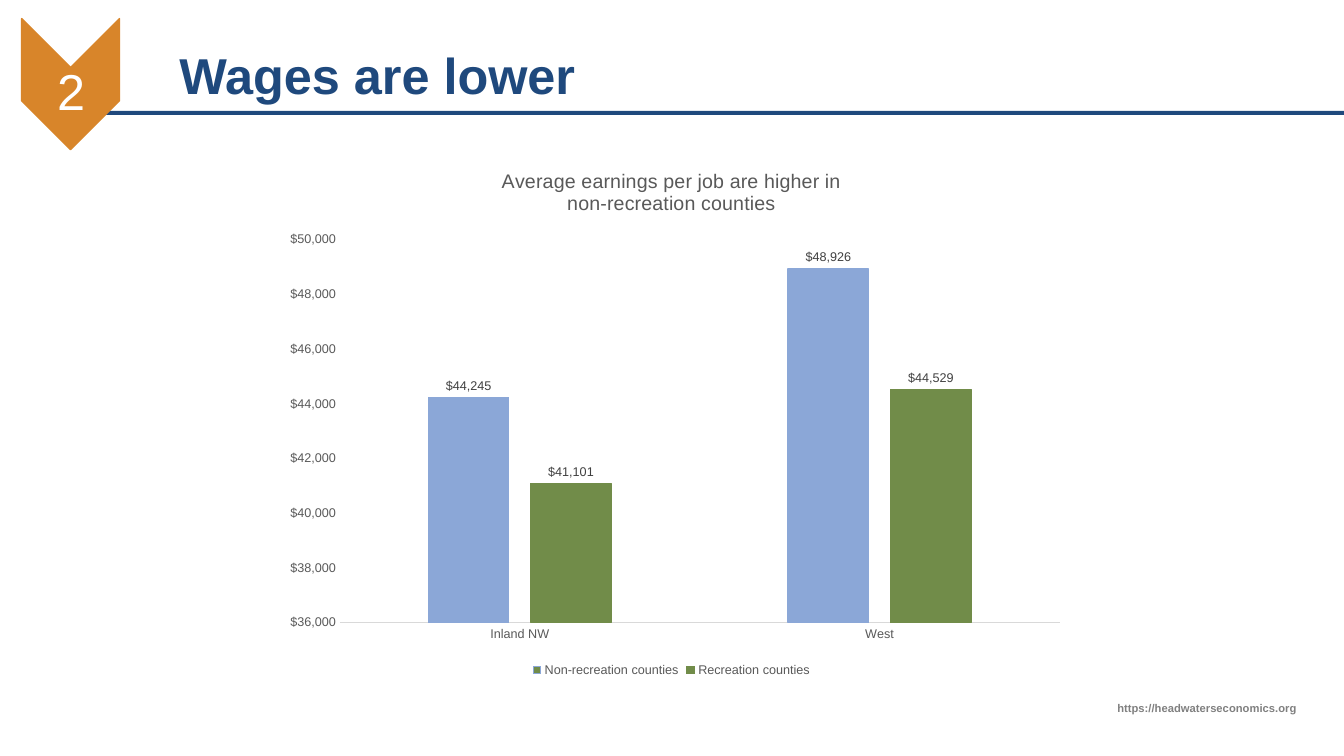
from pptx import Presentation
from pptx.chart.data import CategoryChartData
from pptx.dml.color import RGBColor
from pptx.enum.chart import XL_CHART_TYPE, XL_LABEL_POSITION, XL_LEGEND_POSITION, XL_TICK_MARK
from pptx.enum.shapes import MSO_SHAPE
from pptx.enum.text import MSO_ANCHOR, MSO_AUTO_SIZE, PP_ALIGN
from pptx.oxml import parse_xml
from pptx.oxml.ns import nsdecls
from pptx.util import Pt

COLUMNS = XL_CHART_TYPE.COLUMN_CLUSTERED
OUTSIDE = XL_LABEL_POSITION.OUTSIDE_END
BOTTOM_LEGEND = XL_LEGEND_POSITION.BOTTOM
NO_TICKS = XL_TICK_MARK.NONE
RECTANGLE, CHEVRON = MSO_SHAPE.RECTANGLE, MSO_SHAPE.CHEVRON
MIDDLE, BOTTOM = MSO_ANCHOR.MIDDLE, MSO_ANCHOR.BOTTOM
LEFT, CENTER, RIGHT = PP_ALIGN.LEFT, PP_ALIGN.CENTER, PP_ALIGN.RIGHT
NO_FIT, GROW = MSO_AUTO_SIZE.NONE, MSO_AUTO_SIZE.SHAPE_TO_FIT_TEXT

PX = 9144  # 100 px to the inch
THEME = {
    "font": "Arial",
    "navy": "1F497D", "orange": "D8852A", "white": "FFFFFF",
    "blue": "8BA7D7", "green": "718C49",
    "source": "808080", "axis": "595959", "label": "404040", "baseline": "D9D9D9",
    "heading": 36, "chart_title": 14, "small": 9, "credit": 8,
}
DOLLARS = '"$"#,##0'


def color(name):
    return RGBColor.from_string(THEME[name])


def style(font, size, color_name, bold=False):
    values = {"name": THEME["font"], "size": Pt(THEME[size]), "bold": bold}
    for key, value in values.items():
        setattr(font, key, value)
    font.color.rgb = color(color_name)


deck = Presentation()
deck.slide_width, deck.slide_height = 1333 * PX, 750 * PX
page = deck.slides.add_slide(deck.slide_layouts[5])

# Title and its rule
title = page.shapes.title
title.left, title.top, title.width, title.height = [n * PX for n in (168, 40, 1074, 70)]
rule = page.shapes.add_shape(RECTANGLE, *[n * PX for n in (100, 110, 1233, 4)])

# Numbered chevron
badge = page.shapes.add_group_shape()
chevron = badge.shapes.add_shape(CHEVRON, *[n * PX for n in (5, 35, 130, 97)])
chevron.rotation = 90
chevron.line.color.rgb = color("orange")
chevron.line.width = Pt(1)
number = badge.shapes.add_textbox(*[n * PX for n in (22, 74, 97, 39)])
for side in ("left", "top", "right", "bottom"):
    setattr(number.text_frame, f"margin_{side}", 3 * PX)

for shape, fill in ((rule, "navy"), (chevron, "orange")):
    shape.shadow.inherit = False
    shape.fill.solid()
    shape.fill.fore_color.rgb = color(fill)
rule.line.fill.background()

# Earnings chart
earnings = CategoryChartData(number_format=DOLLARS)
earnings.categories = ["Inland NW", "West"]
earnings.add_series("Non-recreation counties", (44245, 48926))
earnings.add_series("Recreation counties", (41101, 44529))
chart = page.shapes.add_chart(COLUMNS, *[n * PX for n in (265, 148, 802, 528)], earnings).chart
style(chart.font, "small", "axis")

chart.has_title = True
heading = chart.chart_title.text_frame
heading.text = "Average earnings per job are higher in\nnon-recreation counties"
for para in heading.paragraphs:
    style(para.runs[0].font, "chart_title", "axis")
chart.chart_title.include_in_layout = False

chart.has_legend = True
chart.legend.position = BOTTOM_LEGEND
chart.legend.include_in_layout = False
style(chart.legend.font, "small", "axis")

for axis in (chart.category_axis, chart.value_axis):
    axis.major_tick_mark = axis.minor_tick_mark = NO_TICKS
    axis.has_major_gridlines = False
    style(axis.tick_labels.font, "small", "axis")
chart.category_axis.format.line.color.rgb = color("baseline")
chart.category_axis.format.line.width = Pt(0.75)
scale = {"minimum_scale": 36000, "maximum_scale": 50000, "major_unit": 2000}
for key, value in scale.items():
    setattr(chart.value_axis, key, value)
chart.value_axis.format.line.fill.background()
chart.value_axis.tick_labels.number_format = DOLLARS
chart.value_axis.tick_labels.number_format_is_linked = False

plot = chart.plots[0]
plot.gap_width, plot.overlap, plot.vary_by_categories = 219, -27, False
for series, outline in zip(plot.series, ("blue", "green")):
    # The legend key keeps the green fill; the columns take the outline colour
    points = [series.points[i] for i in range(2)] if outline == "blue" else []
    for part, fill in [(series, "green")] + [(point, outline) for point in points]:
        part.format.fill.solid()
        part.format.fill.fore_color.rgb = color(fill)
        part.format.line.color.rgb = color(outline)
        part.format.line.width = Pt(0.75)
    labels = series.data_labels
    formats = {"show_value": True, "position": OUTSIDE,
               "number_format": DOLLARS, "number_format_is_linked": False}
    for key, value in formats.items():
        setattr(labels, key, value)
    style(labels.font, "small", "label")

plot_area = chart.element.chart.plotArea
for layout in plot_area.findall("{*}layout"):
    plot_area.remove(layout)
bounds = "".join(f'<c:{key} val="{value}"/>' for key, value in (
    ("layoutTarget", "inner"), ("xMode", "edge"), ("yMode", "edge"),
    ("x", 0.09), ("y", 0.17), ("w", 0.89), ("h", 0.72)))
plot_area.insert(0, parse_xml(
    f'<c:layout {nsdecls("c")}><c:manualLayout>{bounds}</c:manualLayout></c:layout>'))

# Text
credit = page.shapes.add_textbox(*[n * PX for n in (872, 691, 424, 24)])
for box, text, size, ink, bold, align, anchor, spacing, fit in (
    (title, "Wages are lower", "heading", "navy", True, LEFT, BOTTOM, 0.9, NO_FIT),
    (number, "2", "heading", "white", False, CENTER, MIDDLE, 0.9, NO_FIT),
    (credit, "https://headwaterseconomics.org", "credit", "source", True, RIGHT, None, None, GROW),
):
    frame = box.text_frame
    frame.word_wrap, frame.auto_size, frame.vertical_anchor = True, fit, anchor
    para = frame.paragraphs[0]
    para.alignment, para.line_spacing = align, spacing
    span = para.add_run()
    span.text = text
    style(span.font, size, ink, bold)

deck.save("out.pptx")
